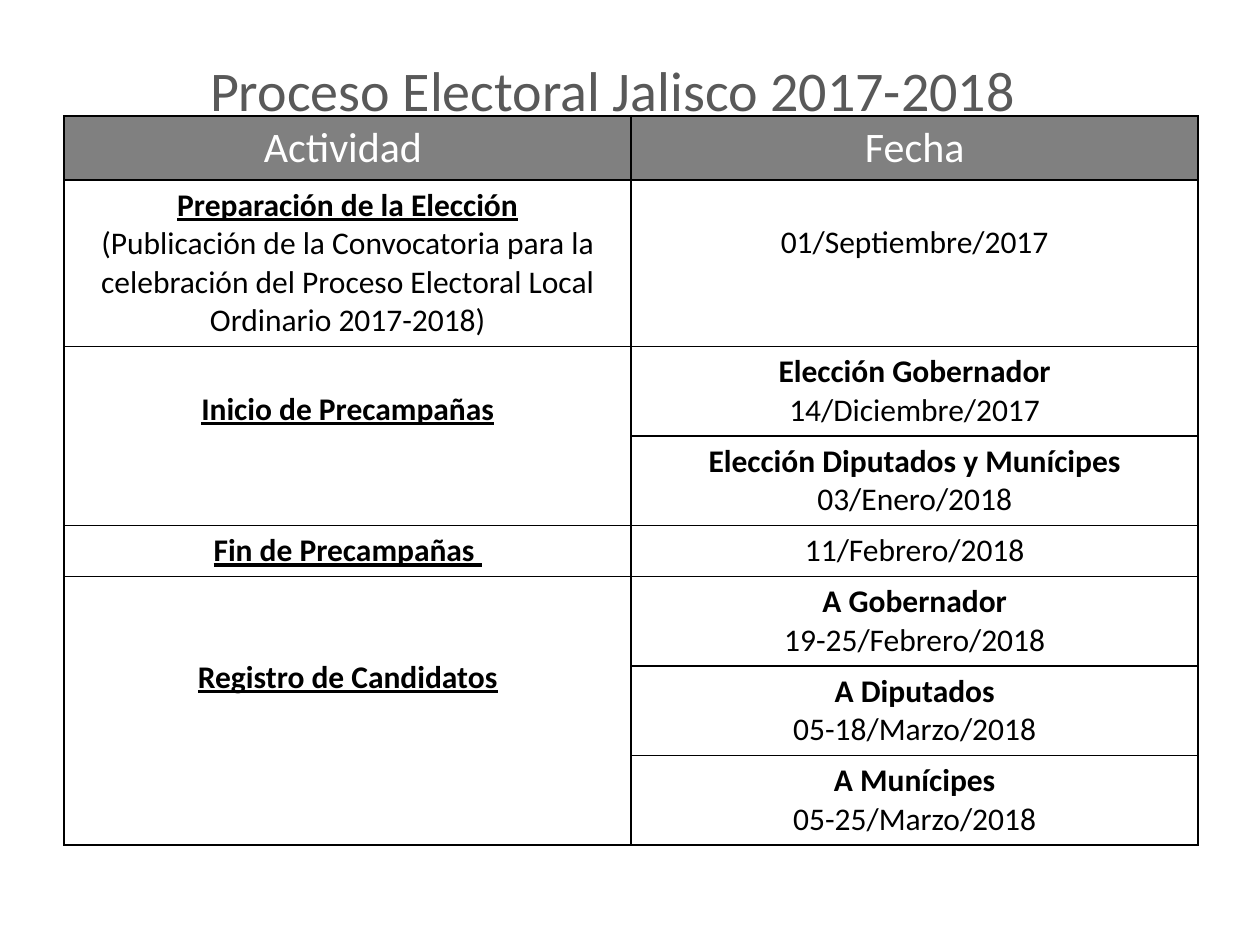
from lxml.etree import SubElement
from pptx import Presentation
from pptx.dml.color import RGBColor
from pptx.enum.text import MSO_ANCHOR, PP_ALIGN
from pptx.oxml.ns import qn
from pptx.util import Inches, Pt

FONT = "Calibri"
BLACK, WHITE, HEADER_GRAY, TITLE_GRAY = "000000", "FFFFFF", "808080", "595959"
LINE_HEIGHT = 0.3
CELL_MARGIN = 0.05
ROW_HEIGHTS = (0.5, 1.29, 0.7, 0.7, 0.4, 0.7, 0.7, 0.7)

ACTIVITIES = (
    {"name": "Preparación de la Elección",
     "detail": "(Publicación de la Convocatoria para la celebración del Proceso Electoral "
               "Local Ordinario 2017-2018)",
     "date_lines_above": 1,
     "dates": [("", "01/Septiembre/2017")]},
    {"name": "Inicio de Precampañas",
     "name_lines_above": 1,
     "dates": [("Elección Gobernador", "14/Diciembre/2017"),
               ("Elección Diputados y Munícipes", "03/Enero/2018")]},
    {"name": "Fin de Precampañas ",
     "dates": [("", "11/Febrero/2018")]},
    {"name": "Registro de Candidatos",
     "name_lines_above": 2,
     "dates": [("A Gobernador", "19-25/Febrero/2018"),
               ("A Diputados", "05-18/Marzo/2018"),
               ("A Munícipes", "05-25/Marzo/2018")]},
)


def color(hex_string):
    """Return the colour for a hex string."""
    return RGBColor.from_string(hex_string)


def write(paragraph, text, size=18, fill=BLACK, bold=False, underline=False):
    """Write centred text in a paragraph with the given format."""
    paragraph.alignment = PP_ALIGN.CENTER
    run = paragraph.add_run()
    run.text = text
    font = run.font
    font.name, font.size = FONT, Pt(size)
    font.bold, font.underline = bold, underline
    font.color.rgb = color(fill)


def fill_cell(cell, heading, detail, lines_above=0, underline=False):
    """Write a bold heading and a plain detail, lowered by whole lines."""
    cell.margin_top = Inches(CELL_MARGIN + lines_above * LINE_HEIGHT)
    frame = cell.text_frame
    paragraph = frame.paragraphs[0]
    if heading:
        write(paragraph, heading, bold=True, underline=underline)
    if detail:
        write(frame.add_paragraph() if heading else paragraph, detail)


def draw_borders(cell):
    """Give a cell black one-point borders on all sides."""
    properties = cell._tc.get_or_add_tcPr()
    for position, side in enumerate(("a:lnL", "a:lnR", "a:lnT", "a:lnB")):
        line = SubElement(properties, qn(side), w=str(Pt(1)))
        SubElement(SubElement(line, qn("a:solidFill")), qn("a:srgbClr"), val=BLACK)
        properties.insert(position, line)


def add_schedule(slide, left, top, width):
    """Add the table of activities and dates."""
    shape = slide.shapes.add_table(
        len(ROW_HEIGHTS), 2, Inches(left), Inches(top), Inches(width), Inches(sum(ROW_HEIGHTS)))
    table = shape.table
    for row, height in zip(table.rows, ROW_HEIGHTS):
        row.height = Inches(height)
    for cell in table.iter_cells():
        cell.fill.background()
        draw_borders(cell)
    for column, text in enumerate(("Actividad ", "Fecha")):
        header = table.cell(0, column)
        header.fill.solid()
        header.fill.fore_color.rgb = color(HEADER_GRAY)
        write(header.text_frame.paragraphs[0], text, size=24, fill=WHITE)
    first_row = 1
    for activity in ACTIVITIES:
        dates = activity["dates"]
        name_cell = table.cell(first_row, 0)
        if len(dates) > 1:
            name_cell.merge(table.cell(first_row + len(dates) - 1, 0))
        fill_cell(name_cell, activity["name"], activity.get("detail"),
                  lines_above=activity.get("name_lines_above", 0), underline=True)
        for row, (election, date) in enumerate(dates, first_row):
            fill_cell(table.cell(row, 1), election, date,
                      lines_above=activity.get("date_lines_above", 0))
        first_row += len(dates)


def place_title(slide, left, top, width, height):
    """Place the slide title in its placeholder."""
    title = slide.shapes.title
    title.left, title.top = Inches(left), Inches(top)
    title.width, title.height = Inches(width), Inches(height)
    title.text_frame.vertical_anchor = MSO_ANCHOR.MIDDLE
    write(title.text_frame.paragraphs[0], "Proceso Electoral Jalisco 2017-2018",
          size=32, fill=TITLE_GRAY)


def main():
    """Build and save the presentation."""
    presentation = Presentation()
    presentation.slide_width, presentation.slide_height = Inches(10), Inches(7.5)
    slide = presentation.slides.add_slide(presentation.slide_layouts[5])
    place_title(slide, 0.67, 0.29, 8.39, 0.84)
    add_schedule(slide, 0.51, 0.92, 9)
    presentation.save("out.pptx")


if __name__ == "__main__":
    main()
